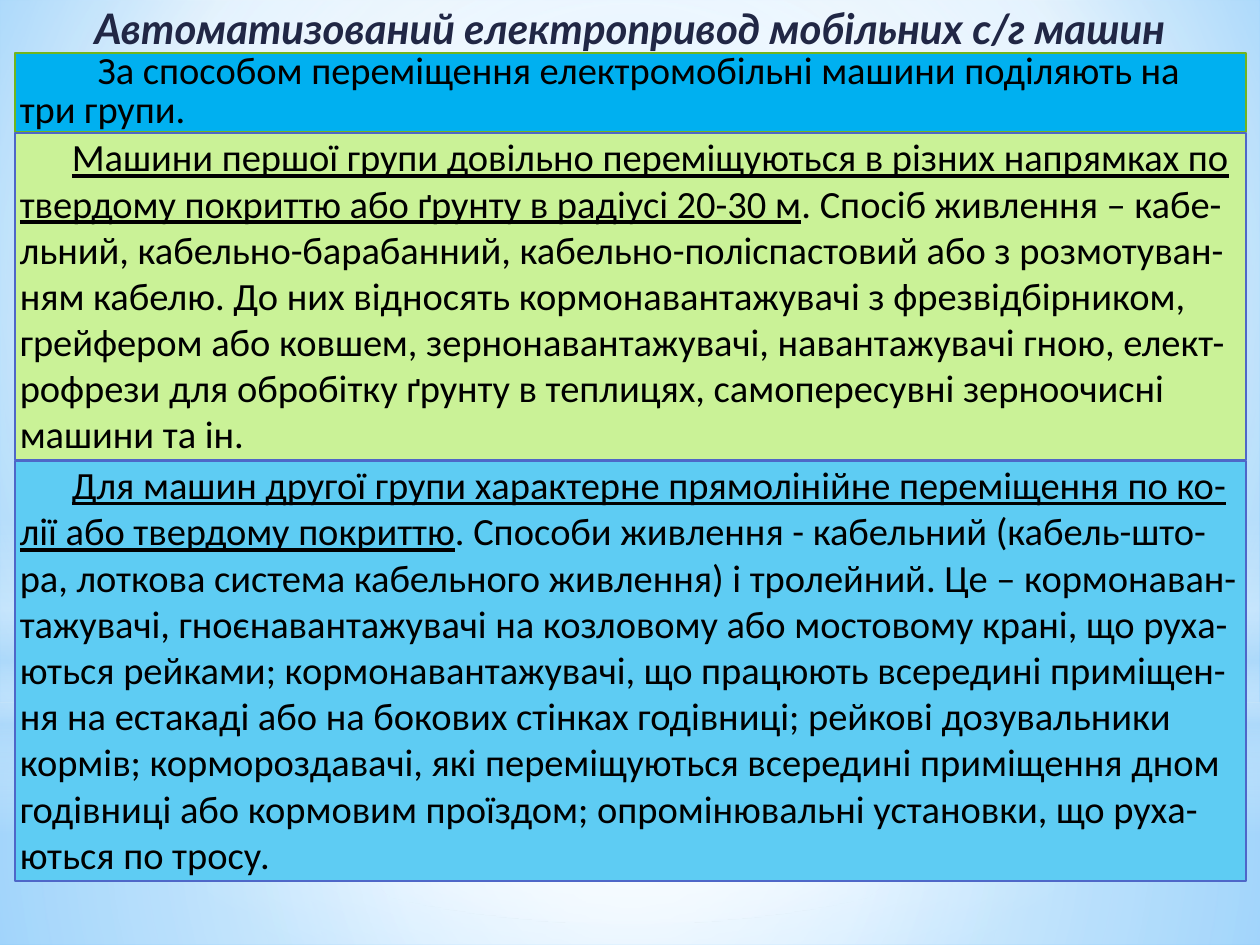
from typing import NamedTuple

from lxml.etree import SubElement
from pptx import Presentation
from pptx.dml.color import RGBColor
from pptx.enum.shapes import MSO_SHAPE
from pptx.enum.text import MSO_ANCHOR, MSO_AUTO_SIZE, PP_ALIGN
from pptx.oxml.ns import qn
from pptx.util import Cm, Pt

WHITE = RGBColor(0xFF, 0xFF, 0xFF)
PALE_BLUE = RGBColor(0xB4, 0xDC, 0xFA)
SKY_BLUE = RGBColor(0x9E, 0xD5, 0xFF)
DEEP_BLUE = RGBColor(0x5B, 0xB9, 0xFF)
NAVY = RGBColor(0x21, 0x27, 0x45)
BLACK = RGBColor(0, 0, 0)
BRIGHT_BLUE = RGBColor(0x00, 0xB0, 0xF0)
LIGHT_GREEN = RGBColor(0xCA, 0xF2, 0x97)
LIGHT_BLUE = RGBColor(0x5E, 0xCC, 0xF3)
GREEN = RGBColor(0x72, 0xB4, 0x1D)
INDIGO = RGBColor(0x4E, 0x67, 0xC8)

SLIDE_WIDTH, SLIDE_HEIGHT = 25.4, 19.05
LEFT = 0.3
CENTER = (50, 50, 50, 50)


class Stop(NamedTuple):
    position: int
    color: RGBColor
    opacity: int = 100


class Glow(NamedTuple):
    """A backdrop shape as wide as the slide; without a focus its gradient runs downwards."""
    kind: MSO_SHAPE
    top: float
    height: float
    stops: list[Stop]
    focus: tuple[int, int, int, int] | None = CENTER


class Panel(NamedTuple):
    top: float
    height: float
    fill: RGBColor
    border: RGBColor
    indent: float
    underlined: str
    plain: str
    line_spacing: float = 1.0


GLOWS = [
    Glow(MSO_SHAPE.RECTANGLE, 14.17, 4.88,
         [Stop(0, WHITE, 91), Stop(37, WHITE, 76), Stop(100, PALE_BLUE, 79)]),
    Glow(MSO_SHAPE.RECTANGLE, 0, 14.17,
         [Stop(0, WHITE, 89), Stop(48, WHITE, 62), Stop(100, PALE_BLUE, 79)]),
    Glow(MSO_SHAPE.RECTANGLE, 10.46, 6.35,
         [Stop(0, WHITE, 0), Stop(29, WHITE, 30), Stop(45, PALE_BLUE, 40),
          Stop(55, WHITE, 26), Stop(65, PALE_BLUE, 60), Stop(100, WHITE, 0)], None),
    Glow(MSO_SHAPE.OVAL, 4.45, 14.17, [Stop(0, WHITE), Stop(56, WHITE, 0)]),
]

PANELS = [
    Panel(1.07, 1.6, BRIGHT_BLUE, GREEN, 1.57, "",
          "За способом переміщення електромобільні машини поділяють на три групи.", 0.85),
    Panel(2.69, 6.58, LIGHT_GREEN, INDIGO, 1.05,
          "Машини першої групи довільно переміщуються в різних напрямках по "
          "твердому покриттю або ґрунту в радіусі 20-30 м",
          ". Спосіб живлення – кабе-льний, кабельно-барабанний, "
          "кабельно-поліспастовий або з розмотуван-ням кабелю. До них відносять "
          "кормонавантажувачі з фрезвідбірником, грейфером або ковшем, "
          "зернонавантажувачі, навантажувачі гною, елект-рофрези для обробітку "
          "ґрунту в теплицях, самопересувні зерноочисні машини та ін."),
    Panel(9.3, 8.46, LIGHT_BLUE, INDIGO, 1.05,
          "Для машин другої групи характерне прямолінійне переміщення по ко-лії "
          "або твердому покриттю",
          ". Способи живлення - кабельний (кабель-што-ра, лоткова система "
          "кабельного живлення) і тролейний. Це – кормонаван-тажувачі, "
          "гноєнавантажувачі на козловому або мостовому крані, що руха-ються "
          "рейками; кормонавантажувачі, що працюють всередині приміщен-ня на "
          "естакаді або на бокових стінках годівниці; рейкові дозувальники кормів; "
          "кормороздавачі, які переміщуються всередині приміщення дном годівниці "
          "або кормовим проїздом; опромінювальні установки, що руха-ються по тросу."),
]


def apply_gradient(properties, stops: list[Stop], focus) -> None:
    """Replace the solid fill inside the given properties element by a gradient."""
    solid = properties.find(qn("a:solidFill"))
    gradient = properties.makeelement(qn("a:gradFill"), {"rotWithShape": "1"})
    properties.replace(solid, gradient)
    stop_list = SubElement(gradient, qn("a:gsLst"))
    for stop in stops:
        entry = SubElement(stop_list, qn("a:gs"), pos=str(stop.position * 1000))
        color = SubElement(entry, qn("a:srgbClr"), val=str(stop.color))
        if stop.opacity < 100:
            SubElement(color, qn("a:alpha"), val=str(stop.opacity * 1000))
    if focus is None:
        SubElement(gradient, qn("a:lin"), ang="5400000", scaled="0")
    else:
        circle = SubElement(gradient, qn("a:path"), path="circle")
        sides = {side: str(share * 1000) for side, share in zip("ltrb", focus)}
        SubElement(circle, qn("a:fillToRect"), sides)


def paint_background(slide) -> None:
    slide.background.fill.solid()
    properties = slide.element.find(".//" + qn("p:bgPr"))
    stops = [Stop(0, SKY_BLUE), Stop(60, WHITE), Stop(100, DEEP_BLUE)]
    apply_gradient(properties, stops, (20, 10, 20, 60))


def add_glow(slide, glow: Glow) -> None:
    shape = slide.shapes.add_shape(
        glow.kind, 0, Cm(glow.top), Cm(SLIDE_WIDTH), Cm(glow.height))
    shape.shadow.inherit = False
    shape.line.fill.background()
    shape.fill.solid()
    apply_gradient(shape.element.spPr, glow.stops, glow.focus)


def prepare_frame(shape, side_margin: float):
    """Set margins, wrapping and anchor, and return the first paragraph."""
    frame = shape.text_frame
    frame.margin_left = frame.margin_right = Cm(side_margin)
    frame.margin_top = frame.margin_bottom = 0
    frame.word_wrap = True
    frame.auto_size = MSO_AUTO_SIZE.SHAPE_TO_FIT_TEXT
    frame.vertical_anchor = MSO_ANCHOR.TOP
    return frame.paragraphs[0]


def format_run(run, name: str, size: int, color: RGBColor, underline: bool) -> None:
    run.font.name = name
    run.font.size = Pt(size)
    run.font.color.rgb = color
    run.font.underline = underline


def add_title(slide, text: str) -> None:
    box = slide.shapes.add_textbox(Cm(LEFT), Cm(0.2), Cm(24.79), Cm(0.86))
    paragraph = prepare_frame(box, 0)
    paragraph.text = text
    paragraph.alignment = PP_ALIGN.CENTER
    paragraph.line_spacing = 0.85
    run = paragraph.runs[0]
    format_run(run, "Lato", 24, NAVY, True)
    run.font.bold = run.font.italic = True


def add_panel(slide, panel: Panel) -> None:
    shape = slide.shapes.add_shape(
        MSO_SHAPE.RECTANGLE, Cm(LEFT), Cm(panel.top), Cm(24.82), Cm(panel.height))
    shape.shadow.inherit = False
    shape.fill.solid()
    shape.fill.fore_color.rgb = panel.fill
    shape.line.color.rgb = panel.border
    shape.line.width = Pt(1.25)
    paragraph = prepare_frame(shape, 0.1)
    paragraph.alignment = PP_ALIGN.LEFT
    paragraph.line_spacing = panel.line_spacing
    paragraph._p.get_or_add_pPr().set("indent", str(Cm(panel.indent)))
    for text, underline in ((panel.underlined, True), (panel.plain, False)):
        if text:
            run = paragraph.add_run()
            run.text = text
            format_run(run, "Calibri", 22, BLACK, underline)


def main() -> None:
    presentation = Presentation()
    presentation.slide_width = Cm(SLIDE_WIDTH)
    presentation.slide_height = Cm(SLIDE_HEIGHT)
    slide = presentation.slides.add_slide(presentation.slide_layouts[6])
    paint_background(slide)
    for glow in GLOWS:
        add_glow(slide, glow)
    add_title(slide, "Автоматизований електропривод мобільних с/г машин")
    for panel in PANELS:
        add_panel(slide, panel)
    presentation.save("out.pptx")


if __name__ == "__main__":
    main()
